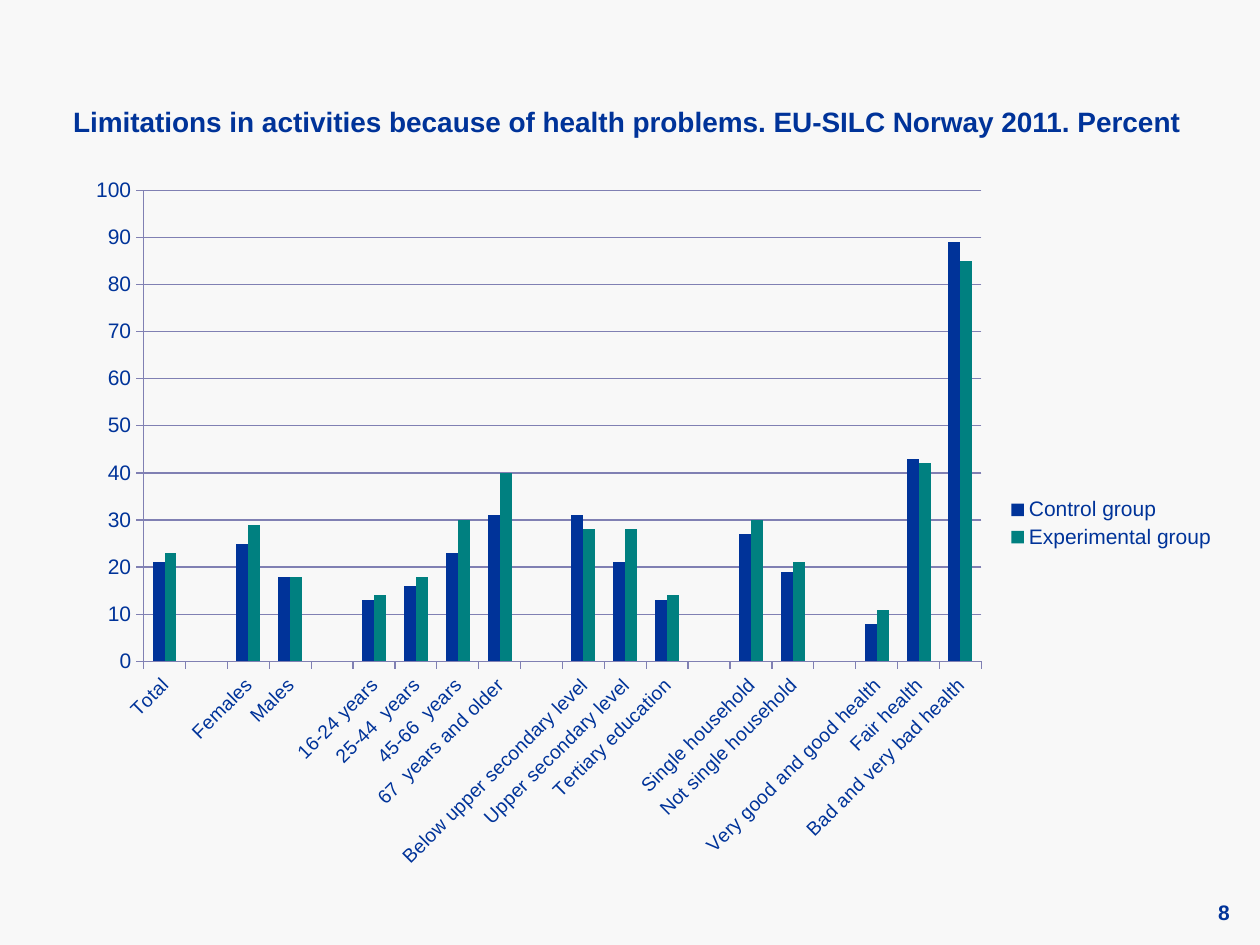
from lxml import etree
from pptx import Presentation
from pptx.chart.data import CategoryChartData
from pptx.dml.color import RGBColor
from pptx.enum import chart as chart_enum, text as text_enum
from pptx.oxml.ns import qn
from pptx.util import Inches, Pt

FONT = "Arial"
NAVY = "003399"
TEAL = "008080"
AXIS_COLOR = "8080B3"


def color(hex_string):
    return RGBColor.from_string(hex_string)


def add_text(slide, content, left, top, width, height, size,
             align=text_enum.PP_ALIGN.LEFT, anchor=text_enum.MSO_ANCHOR.TOP):
    frame = slide.shapes.add_textbox(
        Inches(left), Inches(top), Inches(width), Inches(height)).text_frame
    frame.word_wrap = True
    frame.vertical_anchor = anchor
    frame.margin_left = frame.margin_right = 0
    frame.margin_top = frame.margin_bottom = 0
    paragraph = frame.paragraphs[0]
    paragraph.alignment = align
    run = paragraph.add_run()
    run.text = content
    run.font.name = FONT
    run.font.size = Pt(size)
    run.font.bold = True
    run.font.color.rgb = color(NAVY)


presentation = Presentation()
presentation.slide_width = Inches(10)
presentation.slide_height = Inches(7.5)
slide = presentation.slides.add_slide(presentation.slide_layouts[6])
slide.background.fill.solid()
slide.background.fill.fore_color.rgb = color("F8F8F8")

add_text(slide, "Limitations in activities because of health problems. "
         "EU-SILC Norway 2011. Percent", 0.58, 0.83, 9.17, 0.4, size=16)

# Each group: (category, control, experimental); groups are set apart by an empty category
groups = [
    [("Total", 21, 23)],
    [("Females", 25, 29), ("Males", 18, 18)],
    [("16-24 years", 13, 14), ("25-44  years", 16, 18),
     ("45-66  years", 23, 30), ("67  years and older", 31, 40)],
    [("Below upper secondary level", 31, 28),
     ("Upper secondary level", 21, 28), ("Tertiary education", 13, 14)],
    [("Single household", 27, 30), ("Not single household", 19, 21)],
    [("Very good and good health", 8, 11), ("Fair health", 43, 42),
     ("Bad and very bad health", 89, 85)],
]
rows = list(groups[0])
for group in groups[1:]:
    rows += [("", None, None)] + group
categories, control, experimental = zip(*rows)

chart_data = CategoryChartData()
chart_data.categories = categories
chart_data.add_series("Control group", control)
chart_data.add_series("Experimental group", experimental)
chart = slide.shapes.add_chart(
    chart_enum.XL_CHART_TYPE.COLUMN_CLUSTERED,
    Inches(0.58), Inches(1.31), Inches(9.17), Inches(5.69), chart_data).chart
chart.has_title = False
chart.font.name = FONT
chart.font.size = Pt(18)
chart.font.color.rgb = color(NAVY)

chart.has_legend = True
chart.legend.position = chart_enum.XL_LEGEND_POSITION.RIGHT
chart.legend.include_in_layout = False

plot = chart.plots[0]
plot.gap_width = 150
plot.overlap = 0
plot.vary_by_categories = False
for series, fill_color in zip(plot.series, (NAVY, TEAL)):
    series.format.fill.solid()
    series.format.fill.fore_color.rgb = color(fill_color)
    series.invert_if_negative = False

value_axis, category_axis = chart.value_axis, chart.category_axis
value_axis.minimum_scale = 0
value_axis.maximum_scale = 100
value_axis.major_unit = 10
value_axis.has_major_gridlines = True
for axis in (value_axis, category_axis):
    axis.major_tick_mark = chart_enum.XL_TICK_MARK.OUTSIDE
    axis.minor_tick_mark = chart_enum.XL_TICK_MARK.NONE
for line in (value_axis.format.line, category_axis.format.line,
             value_axis.major_gridlines.format.line):
    line.color.rgb = color(AXIS_COLOR)
    line.width = Pt(0.75)
for part, size in ((value_axis.tick_labels, 12), (category_axis.tick_labels, 11),
                   (chart.legend, 12)):
    part.font.name = FONT
    part.font.size = Pt(size)
    part.font.color.rgb = color(NAVY)

# Slanted category labels, at -45 degrees
label_body = category_axis._element.find(qn("c:txPr")).find(qn("a:bodyPr"))
label_body.set("rot", "-2700000")
label_body.set("vert", "horz")

# Fixed inner plot area, as fractions of the chart
plot_area = chart._chartSpace.chart.plotArea
for old_layout in plot_area.findall(qn("c:layout")):
    plot_area.remove(old_layout)
layout = etree.Element(qn("c:layout"))
manual = etree.SubElement(layout, qn("c:manualLayout"))
for name, value in (("layoutTarget", "inner"), ("xMode", "edge"), ("yMode", "edge"),
                    ("x", 0.56 / 9.17), ("y", 0.2 / 5.69),
                    ("w", 6.65 / 9.17), ("h", 3.74 / 5.69)):
    etree.SubElement(manual, qn("c:" + name)).set("val", str(value))
plot_area.insert(0, layout)

add_text(slide, "8", 9.25, 7.11, 0.51, 0.26, size=12,
         align=text_enum.PP_ALIGN.RIGHT, anchor=text_enum.MSO_ANCHOR.MIDDLE)

presentation.save("out.pptx")
